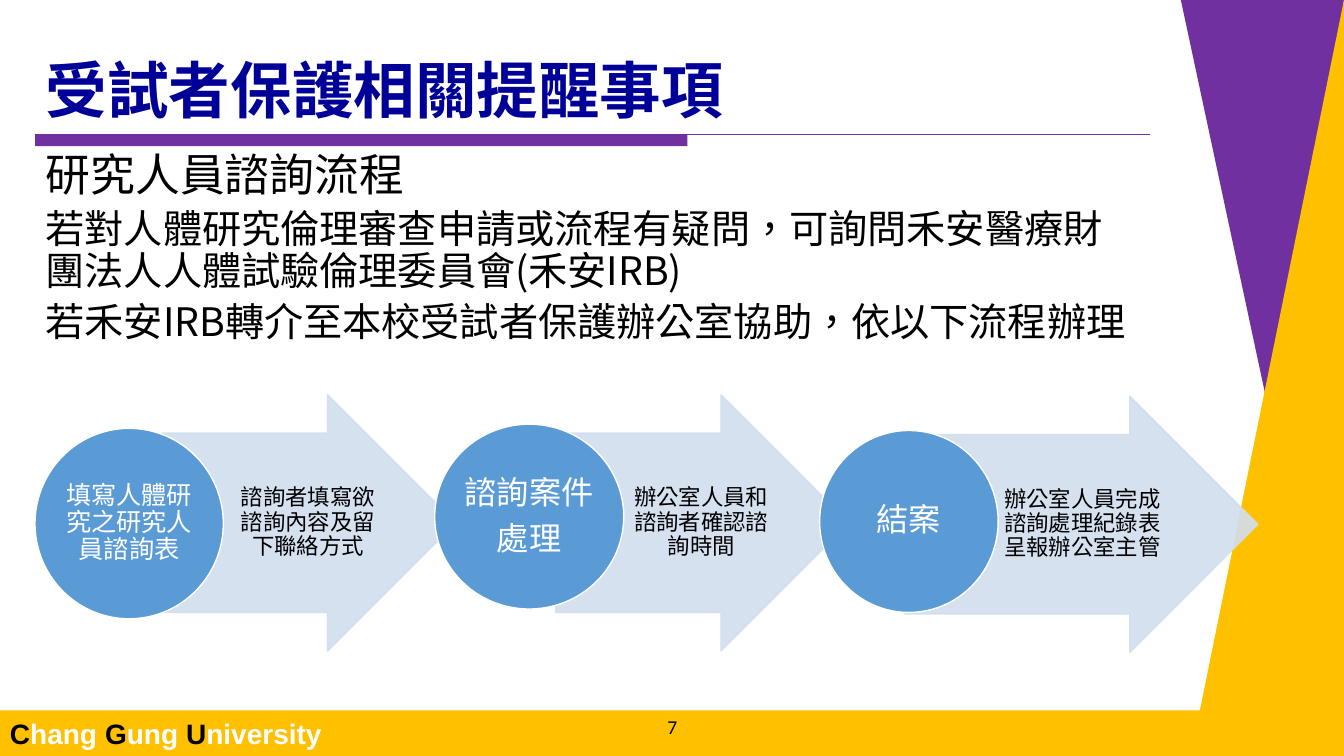
"""Build the slide on the researcher consultation process for participant protection."""
from lxml import etree
from pptx import Presentation
from pptx.dml.color import RGBColor
from pptx.enum.lang import MSO_LANGUAGE_ID
from pptx.enum.shapes import MSO_CONNECTOR, MSO_SHAPE
from pptx.enum.text import MSO_ANCHOR, PP_ALIGN
from pptx.oxml.ns import qn
from pptx.util import Pt

ARROW, OVAL, RECT = MSO_SHAPE.RIGHT_ARROW, MSO_SHAPE.OVAL, MSO_SHAPE.RECTANGLE
STRAIGHT = MSO_CONNECTOR.STRAIGHT
LEFT, CENTER = PP_ALIGN.LEFT, PP_ALIGN.CENTER
TOP, MIDDLE, BOTTOM = MSO_ANCHOR.TOP, MSO_ANCHOR.MIDDLE, MSO_ANCHOR.BOTTOM
TAIWAN = MSO_LANGUAGE_ID.TRADITIONAL_CHINESE
COLORS = {"purple": "7030A0", "gold": "FFC000", "navy": "000099", "black": "000000",
          "white": "FFFFFF", "arrow": "D2DEEF", "circle": "5B9BD5"}
HEADING_FONT, BODY_FONT, FOOTER_FONT = "Noto Sans CJK SC", "Calibri", "Arial"

prs = Presentation()
prs.slide_width, prs.slide_height = Pt(960), Pt(540)
slide = prs.slides.add_slide(prs.slide_layouts[6])
shapes = slide.shapes


def paint(shape, fill, line=None):
    shape.shadow.inherit = False
    shape.fill.solid()
    shape.fill.fore_color.rgb = RGBColor.from_string(COLORS[fill])
    if line:
        shape.line.color.rgb = RGBColor.from_string(COLORS[line])
        shape.line.width = Pt(1)
    else:
        shape.line.fill.background()


def write(shape, paragraphs, align, anchor, font, inset=None, spacing=0.9):
    frame = shape.text_frame
    frame.word_wrap, frame.vertical_anchor = True, anchor
    if inset is not None:
        for side in ("left", "right", "top", "bottom"):
            setattr(frame, f"margin_{side}", Pt(inset))
    for index, (runs, size, bold, after) in enumerate(paragraphs):
        paragraph = frame.paragraphs[0] if index == 0 else frame.add_paragraph()
        layout = {"alignment": align, "line_spacing": spacing, "space_after": Pt(after)}
        for name, value in layout.items():
            setattr(paragraph, name, value)
        for text, color in runs:
            run = paragraph.add_run()
            run.text = text
            style = {"size": Pt(size), "bold": bold, "name": font, "language_id": TAIWAN}
            for name, value in style.items():
                setattr(run.font, name, value)
            run.font.color.rgb = RGBColor.from_string(COLORS[color])


side_panels = [
    ("purple", [(960, 0), (843.5, 0), (912, 320)]),
    ("gold", [(960, 0), (857, 508), (960, 508)]),
]
for color, (start, *corners) in side_panels:
    outline = shapes.build_freeform(Pt(start[0]), Pt(start[1]))
    outline.add_line_segments([(Pt(x), Pt(y)) for x, y in corners])
    paint(outline.convert_to_shape(), color)

footer = shapes.add_shape(RECT, Pt(0), Pt(507.5), Pt(960), Pt(32.5))
paint(footer, "gold")
university = [("C", "black"), ("hang ", "white"), ("G", "black"), ("ung ", "white"),
              ("U", "black"), ("niversity", "white")]
write(footer, [(university, 20, True, 0)], LEFT, MIDDLE, FOOTER_FONT, spacing=1)

title_bar = shapes.add_shape(RECT, Pt(25), Pt(96), Pt(466), Pt(8.5))
paint(title_bar, "purple")
title_rule = shapes.add_connector(STRAIGHT, Pt(25), Pt(96), Pt(821.5), Pt(96))
title_rule.line.color.rgb = RGBColor.from_string(COLORS["purple"])
title_rule.line.width = Pt(0.75)
etree.SubElement(title_rule.element.spPr, qn("a:effectLst"))

title = shapes.add_textbox(Pt(25.5), Pt(28.5), Pt(796.5), Pt(65.5))
write(title, [([("受試者保護相關提醒事項", "navy")], 44, True, 0)], LEFT, BOTTOM, HEADING_FONT)

guidance = [
    ("研究人員諮詢流程", 32),
    ("若對人體研究倫理審查申請或流程有疑問，可詢問禾安醫療財團法人人體試驗倫理委員會(禾安IRB)", 28),
    ("若禾安IRB轉介至本校受試者保護辦公室協助，依以下流程辦理", 28),
]
body = shapes.add_textbox(Pt(25.5), Pt(105.5), Pt(796.5), Pt(155.5))
write(body, [([(text, "black")], size, False, 6) for text, size in guidance],
      LEFT, TOP, HEADING_FONT)

page_number = shapes.add_textbox(Pt(381), Pt(509), Pt(198.5), Pt(20))
write(page_number, [([("7", "black")], 14, False, 0)], CENTER, MIDDLE, BODY_FONT, spacing=1)

steps = [
    ((116, 282, 209.5), (169, 102), "諮詢者填寫欲諮詢內容及留下聯絡方式",
     (25, 306, 134.5, 136), ["填寫人體研究之研究人員諮詢表"], 18),
    ((397, 282, 209.5), (450, 102), "辦公室人員和諮詢者確認諮詢時間",
     (310.5, 303, 135, 132), ["諮詢案件", "處理"], 23),
    ((646.5, 283, 252), (711, 124.5), "辦公室人員完成諮詢處理紀錄表呈報辦公室主管",
     (585.5, 307.5, 127.5, 130), ["結案"], 23),
]
for (x, y, width), (detail_x, detail_width), detail, circle_box, labels, size in steps:
    arrow = shapes.add_shape(ARROW, Pt(x), Pt(y), Pt(width), Pt(183))
    arrow.adjustments[0], arrow.adjustments[1] = 0.7, 0.5
    paint(arrow, "arrow", "arrow")
    for color in arrow.element.spPr.iter(qn("a:srgbClr")):
        etree.SubElement(color, qn("a:alpha"), val="90000")
    detail_box = shapes.add_textbox(Pt(detail_x), Pt(y + 27.5), Pt(detail_width), Pt(128))
    write(detail_box, [([(detail, "black")], 16, False, 0)], CENTER, MIDDLE, BODY_FONT, 1)

    circle = shapes.add_shape(OVAL, *map(Pt, circle_box))
    paint(circle, "circle", "white")
    write(circle, [([(label, "white")], size, False, size * 0.35) for label in labels],
          CENTER, MIDDLE, BODY_FONT, 1)

prs.save("out.pptx")
